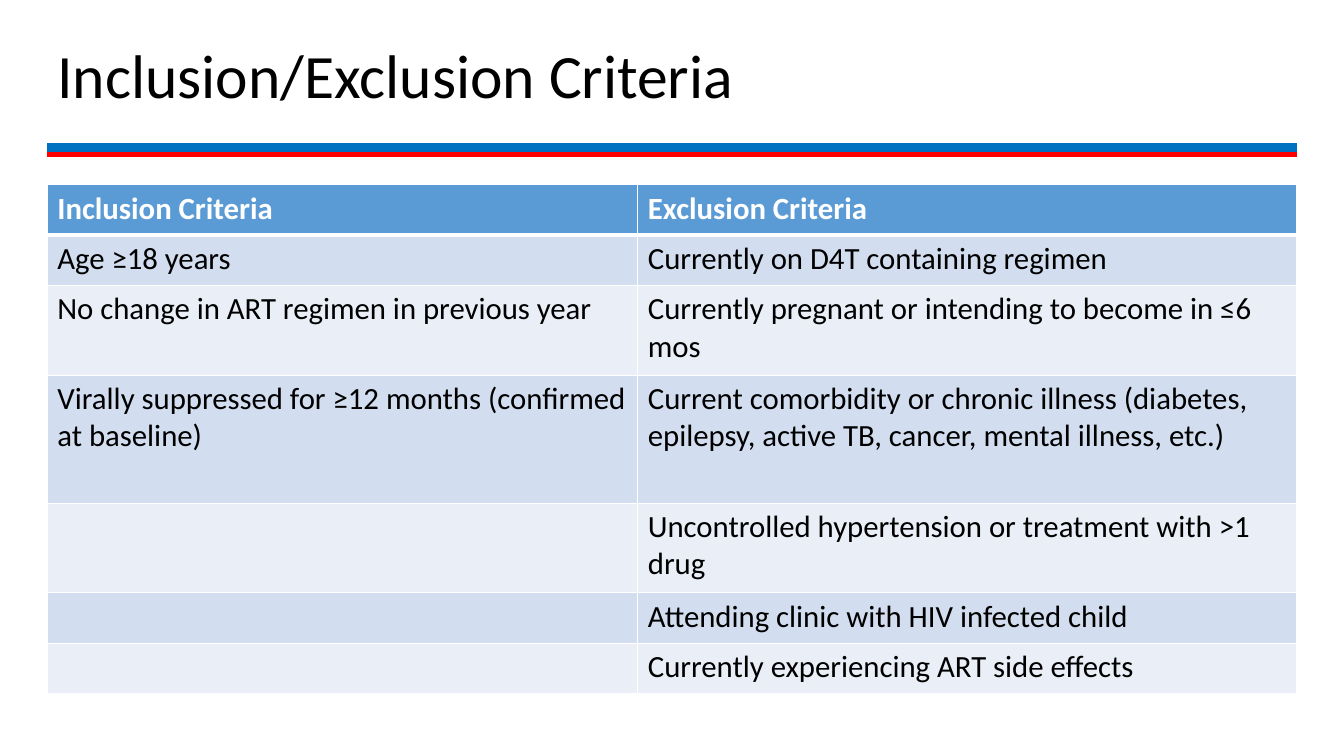
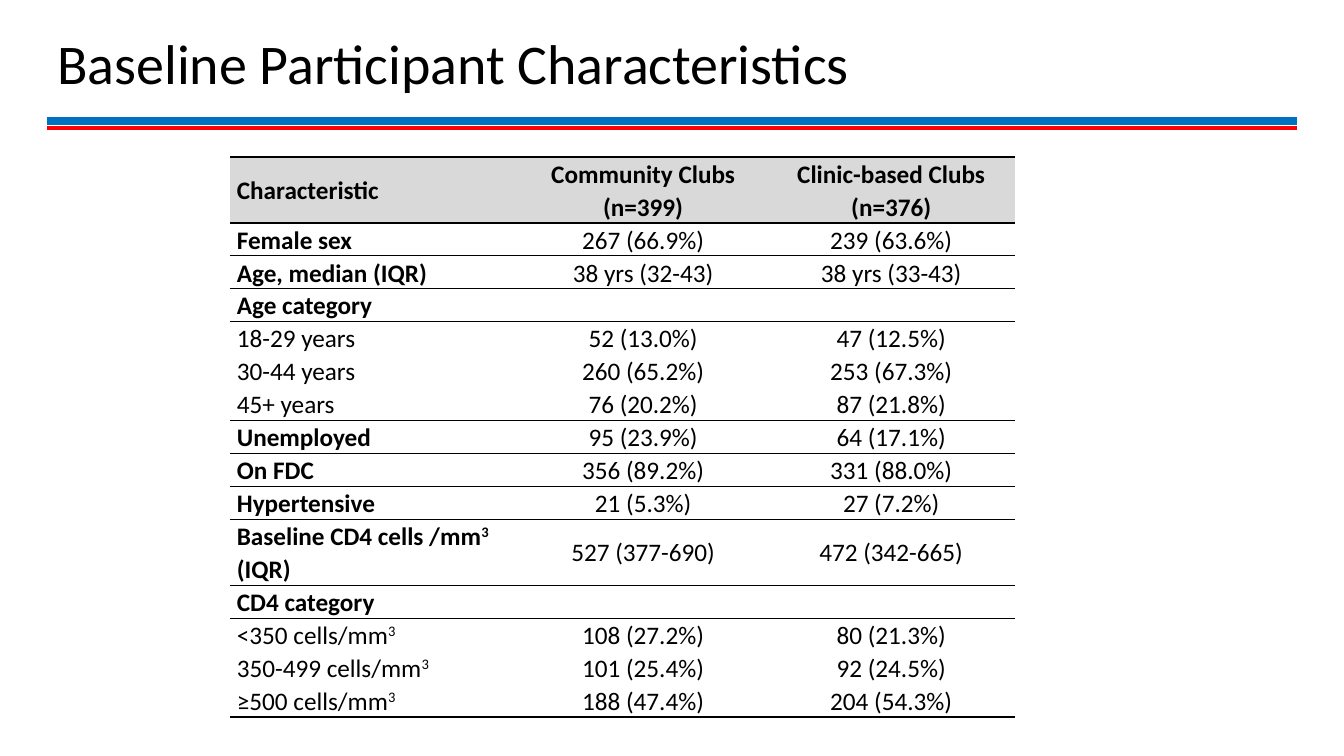
from dataclasses import dataclass
from typing import Callable

from lxml.etree import SubElement
from pptx import Presentation
from pptx.dml.color import RGBColor
from pptx.enum.shapes import MSO_CONNECTOR
from pptx.enum.text import MSO_ANCHOR, MSO_AUTO_SIZE, PP_ALIGN
from pptx.oxml.ns import qn
from pptx.util import Pt

FONT = "Calibri"
BLACK, WHITE, GREY = "000000", "FFFFFF", "D9D9D9"
BLUE, RED = "0070C0", "FF0000"
HEADER_BLUE, BAND_DARK, BAND_LIGHT = "5B9BD5", "D2DEEF", "EAEFF7"
LEFT, WIDTH = 33.8, 892.4


@dataclass
class Line:
    color: str
    width: float


@dataclass
class Style:
    size: float
    color: str = BLACK
    bold: bool = False
    align: PP_ALIGN = PP_ALIGN.LEFT
    anchor: MSO_ANCHOR = MSO_ANCHOR.TOP
    spacing: float = 1.0
    margin_x: float = 7.2
    margin_y: float = 3.6


@dataclass
class Row:
    texts: tuple[str, ...]
    height: float = 22.5
    heading: bool = True
    rule_below: bool = True


CRITERIA = [
    Row(("Inclusion Criteria", "Exclusion Criteria"), 36),
    Row(("Age ≥18 years", "Currently on D4T containing regimen"), 36),
    Row(("No change in ART regimen in previous year",
         "Currently pregnant or intending to become in ≤6 mos"), 64),
    Row(("Virally suppressed for ≥12 months (confirmed at baseline)",
         "Current comorbidity or chronic illness (diabetes, epilepsy, "
         "active TB, cancer, mental illness, etc.)"), 91.5),
    Row(("", "Uncontrolled hypertension or treatment with >1 drug"), 64),
    Row(("", "Attending clinic with HIV infected child"), 36),
    Row(("", "Currently experiencing ART side effects"), 36),
]

# Text between carets is superscript.
BASELINE = [
    Row(("Characteristic", "Community Clubs (n=399)", "Clinic-based Clubs (n=376)"), 45),
    Row(("Female sex", "267 (66.9%)", "239 (63.6%)")),
    Row(("Age, median (IQR)", "38 yrs (32-43)", "38 yrs (33-43)")),
    Row(("Age category", "", "")),
    Row(("18-29 years", "52 (13.0%)", "47 (12.5%)"), heading=False, rule_below=False),
    Row(("30-44 years", "260 (65.2%)", "253 (67.3%)"), heading=False, rule_below=False),
    Row(("45+ years", "76 (20.2%)", "87 (21.8%)"), heading=False),
    Row(("Unemployed", "95 (23.9%)", "64 (17.1%)")),
    Row(("On FDC", "356 (89.2%)", "331 (88.0%)")),
    Row(("Hypertensive", "21 (5.3%)", "27 (7.2%)")),
    Row(("Baseline CD4 cells /mm^3 ^(IQR)", "527 (377-690)", "472 (342-665)")),
    Row(("CD4 category", "", "")),
    Row(("<350 cells/mm^3^", "108 (27.2%)", "80 (21.3%)"), heading=False, rule_below=False),
    Row(("350-499 cells/mm^3^", "101 (25.4%)", "92 (24.5%)"), heading=False, rule_below=False),
    Row(("≥500 cells/mm^3^", "188 (47.4%)", "204 (54.3%)"), heading=False),
]


def rgb(color: str) -> RGBColor:
    return RGBColor.from_string(color)


def add_text(p, text: str, style: Style) -> None:
    """Fill a paragraph, raising the parts between carets."""
    p.alignment = style.align
    p.line_spacing = style.spacing
    for i, part in enumerate(text.split("^")):
        if not part:
            continue
        r = p.add_run()
        r.text = part
        r.font.name = FONT
        r.font.size = Pt(style.size)
        r.font.bold = style.bold
        r.font.color.rgb = rgb(style.color)
        if i % 2:
            r._r.get_or_add_rPr().set("baseline", "30000")


def add_rule(slide, y: float, line: Line) -> None:
    sp = slide.shapes.add_connector(
        MSO_CONNECTOR.STRAIGHT, Pt(LEFT), Pt(y), Pt(LEFT + WIDTH), Pt(y))
    sp.line.color.rgb = rgb(line.color)
    sp.line.width = Pt(line.width)
    SubElement(sp._element.spPr, qn("a:effectLst"))


def add_titled_slide(prs, title: str, top: float, height: float, size: float, rule_y: float):
    slide = prs.slides.add_slide(prs.slide_layouts[5])
    sp = slide.shapes.title
    sp.left, sp.top, sp.width, sp.height = Pt(LEFT), Pt(top), Pt(WIDTH), Pt(height)
    tf = sp.text_frame
    tf.word_wrap = True
    tf.auto_size = MSO_AUTO_SIZE.NONE
    tf.vertical_anchor = MSO_ANCHOR.MIDDLE
    add_text(tf.paragraphs[0], title, Style(size, spacing=0.9))
    add_rule(slide, rule_y, Line(BLUE, 6))
    add_rule(slide, rule_y + 5, Line(RED, 3))
    return slide


def set_border(cell, side: str, line: Line | None) -> None:
    ln = SubElement(cell._tc.get_or_add_tcPr(), qn(f"a:ln{side}"))
    if line is None:
        ln.set("w", "0")
        SubElement(ln, qn("a:noFill"))
        return
    ln.set("w", str(int(Pt(line.width))))
    fill = SubElement(ln, qn("a:solidFill"))
    SubElement(fill, qn("a:srgbClr")).set("val", line.color)


def format_cell(cell, text: str, style: Style, fill: str | None) -> None:
    cell.margin_left = cell.margin_right = Pt(style.margin_x)
    cell.margin_top = cell.margin_bottom = Pt(style.margin_y)
    cell.vertical_anchor = style.anchor
    add_text(cell.text_frame.paragraphs[0], text, style)
    if fill:
        cell.fill.solid()
        cell.fill.fore_color.rgb = rgb(fill)
    else:
        cell.fill.background()


def add_grid(slide, left: float, top: float, widths: list[float], rows: list[Row],
             h_lines: list[Line | None], v_line: Line | None,
             style_of: Callable[[int, int], Style],
             fill_of: Callable[[int], str | None]) -> None:
    """Draw a table; h_lines holds the line above each row, then the last one."""
    table = slide.shapes.add_table(
        len(rows), len(widths), Pt(left), Pt(top),
        Pt(sum(widths)), Pt(sum(row.height for row in rows))).table
    table.first_row = table.horz_banding = False
    for col, width in zip(table.columns, widths):
        col.width = Pt(width)
    for i, row in enumerate(rows):
        table.rows[i].height = Pt(row.height)
        for j, text in enumerate(row.texts):
            cell = table.cell(i, j)
            borders = {"L": v_line, "R": v_line, "T": h_lines[i], "B": h_lines[i + 1]}
            for side, line in borders.items():
                set_border(cell, side, line)
            format_cell(cell, text, style_of(i, j), fill_of(i))


def criteria_style(i: int, j: int) -> Style:
    return Style(22, BLACK if i else WHITE, bold=i == 0)


def criteria_fill(i: int) -> str:
    if i == 0:
        return HEADER_BLUE
    return BAND_DARK if i % 2 else BAND_LIGHT


def baseline_style(i: int, j: int) -> Style:
    return Style(
        18,
        bold=i == 0 or (j == 0 and BASELINE[i].heading),
        align=PP_ALIGN.CENTER if j else PP_ALIGN.LEFT,
        anchor=MSO_ANCHOR.MIDDLE if j or i == 0 else MSO_ANCHOR.TOP,
        spacing=1.07, margin_x=5, margin_y=0)


def baseline_fill(i: int) -> str | None:
    return None if i else GREY


def main() -> None:
    prs = Presentation()
    prs.slide_width, prs.slide_height = Pt(960), Pt(540)

    slide = add_titled_slide(prs, "Inclusion/Exclusion Criteria", 10.8, 90, 44, 105.4)
    thin = Line(WHITE, 1)
    h_lines = [thin, Line(WHITE, 3)] + [thin] * (len(CRITERIA) - 1)
    add_grid(slide, LEFT, 132, [421.8, 470.6], CRITERIA, h_lines, thin,
             criteria_style, criteria_fill)

    slide = add_titled_slide(prs, "Baseline Participant Characteristics", 8, 78.5, 40, 86.5)
    rule = Line(BLACK, 1)
    h_lines = [rule] + [rule if row.rule_below else None for row in BASELINE]
    add_grid(slide, 164.2, 112.2, [206.6, 177.2, 177.2], BASELINE, h_lines, None,
             baseline_style, baseline_fill)

    prs.save("out.pptx")


if __name__ == "__main__":
    main()
